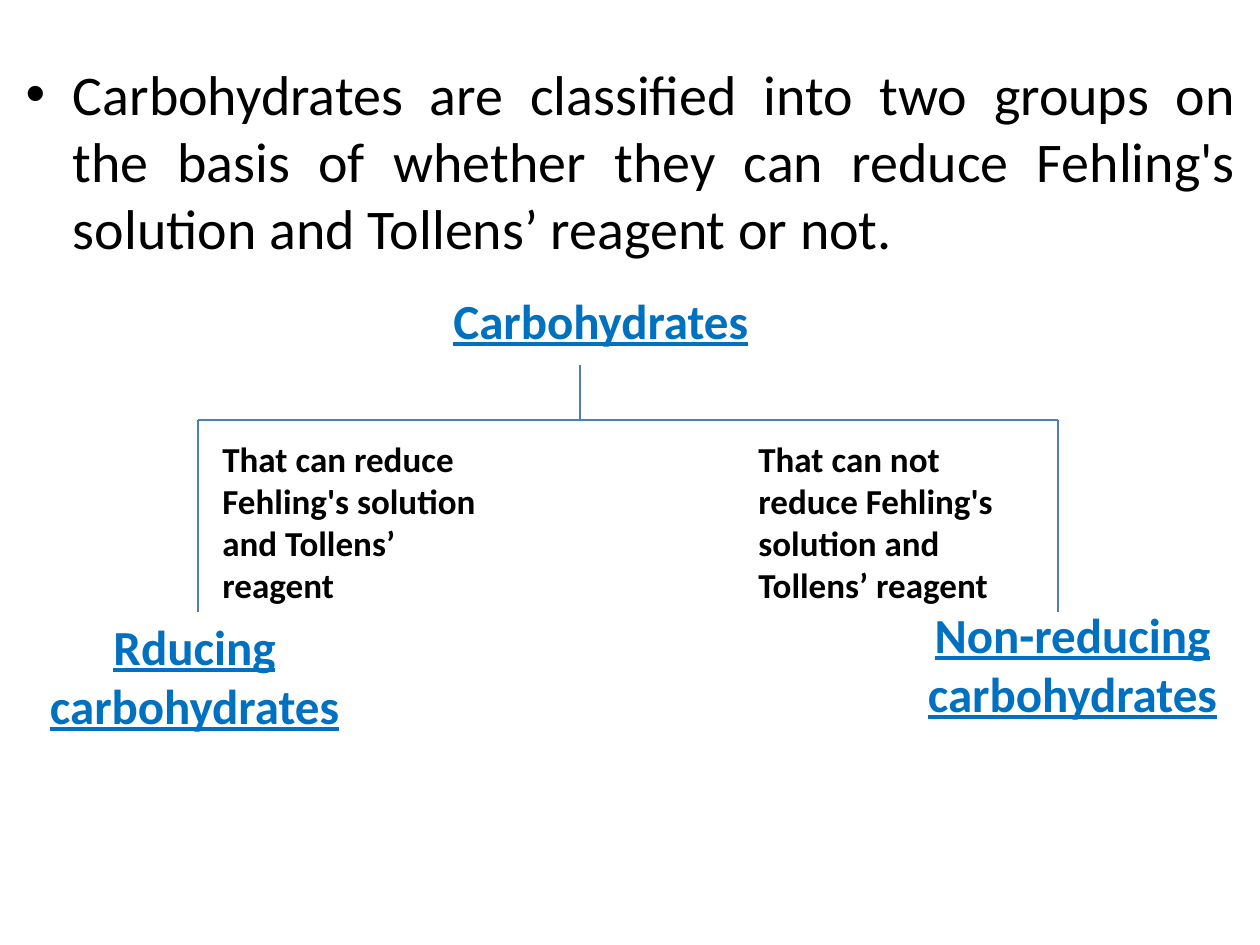
from lxml.etree import SubElement
from pptx import Presentation
from pptx.dml.color import RGBColor
from pptx.enum.shapes import MSO_CONNECTOR
from pptx.enum.text import MSO_AUTO_SIZE, PP_ALIGN
from pptx.oxml.ns import qn
from pptx.util import Emu, Pt

EMU_PER_PX = 914400 / 126
FONT = "Calibri"
BLACK = RGBColor(0x00, 0x00, 0x00)
HEADING_BLUE = RGBColor(0x00, 0x70, 0xC0)
LINE_BLUE = RGBColor(0x4B, 0x7E, 0xBC)

# Branches of the classification tree
LEFT_X, STEM_X, RIGHT_X = 198, 580, 1058
STEM_TOP, BAR_Y, BRANCH_BOTTOM = 365, 420, 612


def px(length):
    return Emu(round(length * EMU_PER_PX))


def place(shape, left, top, width, height):
    shape.left, shape.top = px(left), px(top)
    shape.width, shape.height = px(width), px(height)


def set_font(paragraph, size, color, bold=False, underline=False):
    font = paragraph.font
    font.name, font.size = FONT, Pt(size)
    font.bold, font.underline = bold, underline
    font.color.rgb = color


def fill_body(slide, text):
    """Place the bulleted statement in the body placeholder."""
    body = slide.placeholders[1]
    place(body, 13, 53, 1236, 399)
    body.text_frame.auto_size = MSO_AUTO_SIZE.NONE
    paragraph = body.text_frame.paragraphs[0]
    paragraph.text = text
    paragraph.alignment = PP_ALIGN.JUSTIFY
    set_font(paragraph, 32, BLACK)


def add_text(slide, text, box, align=PP_ALIGN.LEFT, wrap=True):
    shape = slide.shapes.add_textbox(*map(px, box))
    shape.text_frame.word_wrap = wrap
    paragraph = shape.text_frame.paragraphs[0]
    paragraph.text = text
    paragraph.alignment = align
    return paragraph


def add_heading(slide, text, box, **layout):
    set_font(add_text(slide, text, box, **layout), 28, HEADING_BLUE,
             bold=True, underline=True)


def add_reason(slide, text, left):
    set_font(add_text(slide, text, (left, 431, 307, 183)), 20, BLACK, bold=True)


def add_line(slide, *ends):
    line = slide.shapes.add_connector(MSO_CONNECTOR.STRAIGHT, *map(px, ends))
    line.line.color.rgb = LINE_BLUE
    line.line.width = Pt(0.75)
    SubElement(line._element.spPr, qn("a:effectLst"))


def main():
    presentation = Presentation()
    presentation.slide_width, presentation.slide_height = px(1260), px(945)
    slide = presentation.slides.add_slide(presentation.slide_layouts[1])
    title = slide.shapes.title.element
    title.getparent().remove(title)

    fill_body(slide, "Carbohydrates are classified into two groups on the basis of "
                     "whether they can reduce Fehling's solution and Tollens’ "
                     "reagent or not.")

    add_line(slide, STEM_X, STEM_TOP, STEM_X, BAR_Y)
    add_line(slide, LEFT_X, BAR_Y, RIGHT_X, BAR_Y)
    for x in (LEFT_X, RIGHT_X):
        add_line(slide, x, BAR_Y, x, BRANCH_BOTTOM)

    add_heading(slide, "Carbohydrates", (441, 284, 324, 72), wrap=False)
    add_heading(slide, "Rducing carbohydrates", (21, 610, 347, 131),
                align=PP_ALIGN.CENTER)
    add_heading(slide, "Non-reducing carbohydrates", (895, 598, 355, 131),
                align=PP_ALIGN.CENTER)
    add_reason(slide, "That can reduce Fehling's solution and Tollens’ reagent", 210)
    add_reason(slide, "That can not reduce Fehling's solution and Tollens’ reagent", 746)

    presentation.save("out.pptx")


if __name__ == "__main__":
    main()
